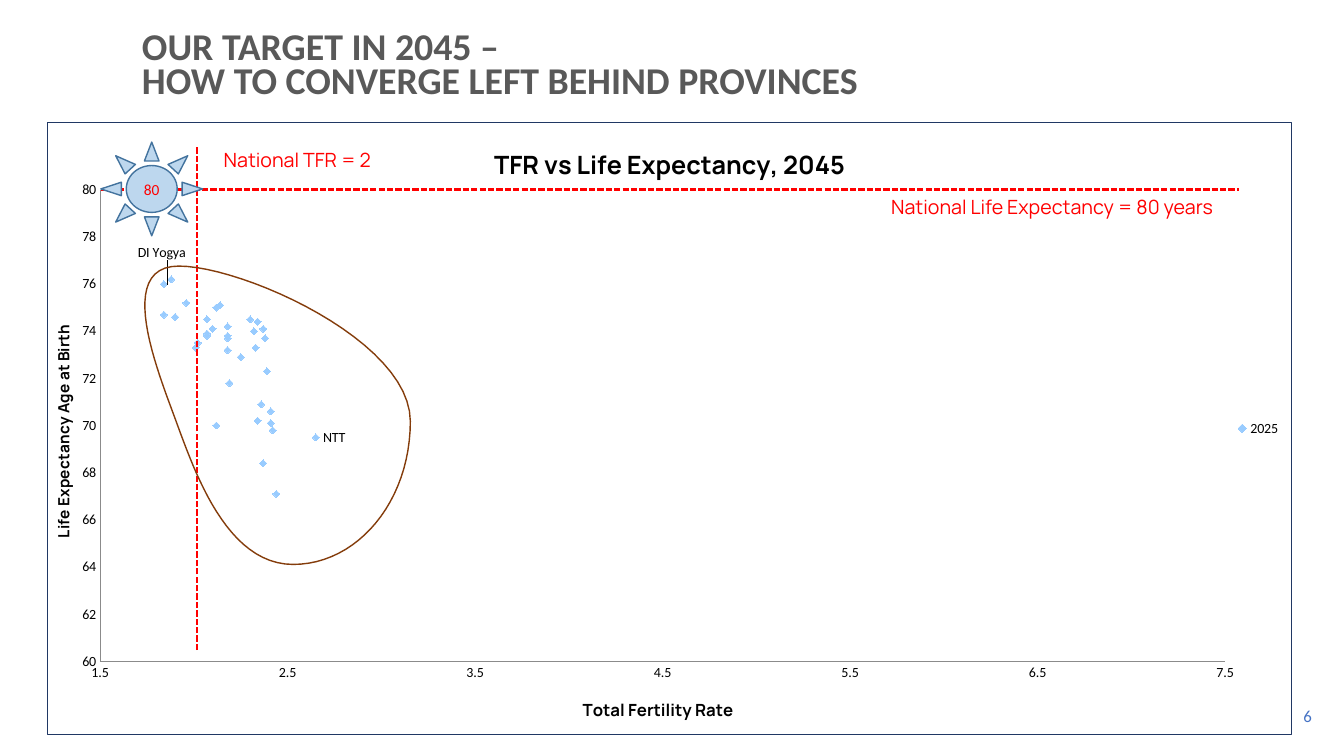
from dataclasses import dataclass

from pptx import Presentation, oxml
from pptx import util as u
from pptx.chart.data import XyChartData
from pptx.dml.color import RGBColor
from pptx.enum import chart as charts, dml, shapes, text
from pptx.oxml import ns


@dataclass(frozen=True)
class Theme:
    """Colours, fonts and type sizes of the slide."""
    body: str = "Calibri"
    display: str = "Manrope"
    ink: str = "000000"
    heading: str = "595959"
    target: str = "FF0000"
    frame: str = "203864"
    axis: str = "8B8B8B"
    province: str = "99CCFF"
    cluster: str = "843C0B"
    sun: str = "BDD7EE"
    sun_edge: str = "43739E"
    number: str = "4472C4"
    heading_size: float = 27
    chart_title_size: float = 18
    note_size: float = 14
    axis_title_size: float = 12
    side_title_size: float = 11
    label_size: float = 10


THEME = Theme()
FERTILITY = [2.33, 2.37, 2.38, 2.34, 2.18, 2.3, 2.19, 2.18, 2.18, 2.14, 1.88, 2.07,
             1.96, 1.84, 1.84, 2.12, 1.9, 2.34, 2.65, 2.18, 2.02, 2.25, 2.07, 2.32,
             2.01, 2.41, 2.07, 2.39, 2.12, 2.42, 2.41, 2.36, 2.44, 2.37, 2.1]
LIFE = [73.3, 74.1, 73.7, 74.4, 73.2, 74.5, 71.8, 74.2, 73.8, 75.1, 76.2, 74.5,
        75.2, 76, 74.7, 75, 74.6, 70.2, 69.5, 73.7, 73.5, 72.9, 73.9, 74,
        73.3, 70.1, 73.8, 72.3, 70, 69.8, 70.6, 70.9, 67.1, 68.4, 74.1]
PROVINCE_LABELS = {13: "DI Yogya", 18: "NTT"}


def assign(target, values):
    """Set every named attribute on the target."""
    for name, value in values.items():
        setattr(target, name, value)


def style_font(font, size, color, face=THEME.body, bold=False):
    """Apply size, colour, face and weight to a font."""
    assign(font, dict(size=u.Pt(size), name=face, bold=bold))
    font.color.rgb = RGBColor.from_string(color)


def style_line(line, color, width, dash=None):
    """Apply colour, width and dash to an outline."""
    line.color.rgb = RGBColor.from_string(color)
    assign(line, dict(width=u.Pt(width), dash_style=dash))


def add_text(slide, box, lines, font, **paragraph_format):
    """Place a text box with one paragraph per line."""
    frame = slide.shapes.add_textbox(*map(u.Inches, box)).text_frame
    frame.word_wrap = True
    frame.text = "\n".join(lines)
    for paragraph in frame.paragraphs:
        assign(paragraph, paragraph_format)
        style_font(paragraph.runs[0].font, *font)
    return frame


def manual_layout(**places):
    """Return a chart layout element with the given places."""
    parts = "".join(f'<c:{name} val="{value}"/>' for name, value in places.items())
    return oxml.parse_xml(f'<c:layout {ns.nsdecls("c")}><c:manualLayout>{parts}'
                          '</c:manualLayout></c:layout>')


def add_title(holder, words, size):
    """Give a chart or an axis its bold title."""
    holder.has_title = True
    title = holder.chart_title if hasattr(holder, "chart_title") else holder.axis_title
    title.text_frame.text = words
    style_font(title.text_frame.paragraphs[0].runs[0].font, size, THEME.ink,
               THEME.display, True)


def style_axis(axis, words, size, low, high, step):
    """Set scale, title and line of one axis."""
    assign(axis, dict(minimum_scale=low, maximum_scale=high, major_unit=step,
                      has_major_gridlines=False,
                      major_tick_mark=charts.XL_TICK_MARK.NONE,
                      minor_tick_mark=charts.XL_TICK_MARK.NONE))
    assign(axis.tick_labels, dict(number_format="General", number_format_is_linked=False))
    style_line(axis.format.line, THEME.axis, 0.75)
    add_title(axis, words, size)


def style_provinces(series):
    """Draw the provinces as diamonds and name the outliers."""
    series.format.line.fill.background()
    assign(series.marker, dict(style=charts.XL_MARKER_STYLE.DIAMOND, size=5))
    series.marker.format.fill.solid()
    series.marker.format.fill.fore_color.rgb = RGBColor.from_string(THEME.province)
    series.marker.format.line.fill.background()
    for index, province in PROVINCE_LABELS.items():
        label = series.points[index].data_label
        label.text_frame.text = province
        style_font(label.text_frame.paragraphs[0].runs[0].font, THEME.label_size, THEME.ink)
        label.position = charts.XL_LABEL_POSITION.RIGHT
    first = next(series._element.iter(ns.qn("c:dLbl")))
    first.find(ns.qn("c:idx")).addnext(manual_layout(x=-0.027, y=-0.051))


def add_scatter(slide, box):
    """Place the framed scatter chart of provinces."""
    data = XyChartData()
    provinces = data.add_series("2025")
    for fertility, life in zip(FERTILITY, LIFE):
        provinces.add_data_point(fertility, life)
    chart = slide.shapes.add_chart(charts.XL_CHART_TYPE.XY_SCATTER,
                                   *map(u.Inches, box), data).chart
    style_font(chart.font, THEME.label_size, THEME.ink)
    add_title(chart, "TFR vs Life Expectancy, 2045", THEME.chart_title_size)
    style_axis(chart.category_axis, "Total Fertility Rate", THEME.axis_title_size, 1.5, 7.5, 1)
    style_axis(chart.value_axis, "Life Expectancy Age at Birth", THEME.side_title_size, 60, 80, 2)
    chart.plots[0].vary_by_categories = False
    style_provinces(chart.plots[0].series[0])
    chart.has_legend = True
    assign(chart.legend, dict(position=charts.XL_LEGEND_POSITION.RIGHT, include_in_layout=False))
    root = chart._chartSpace
    next(root.iter(ns.qn("c:legendPos"))).addnext(
        manual_layout(xMode="edge", yMode="edge", x=0.22, y=0.64, w=0.05, h=0.06))
    plot_area = next(root.iter(ns.qn("c:plotArea")))
    for layout in plot_area.findall(ns.qn("c:layout")):
        plot_area.remove(layout)
    plot_area.insert(0, manual_layout(layoutTarget="inner", xMode="edge", yMode="edge",
                                      x=0.042, y=0.11, w=0.905, h=0.771))
    root.find(ns.qn("c:txPr")).addprevious(oxml.parse_xml(
        f'<c:spPr {ns.nsdecls("c", "a")}><a:noFill/><a:ln w="9525"><a:solidFill>'
        f'<a:srgbClr val="{THEME.frame}"/></a:solidFill></a:ln></c:spPr>'))


def add_line(slide, start, end, color, width, dash=None):
    """Draw a straight line without shadow."""
    line = slide.shapes.add_connector(shapes.MSO_CONNECTOR.STRAIGHT,
                                      *map(u.Inches, start + end))
    style_line(line.line, color, width, dash)
    line._element.spPr.append(oxml.parse_xml(f'<a:effectLst {ns.nsdecls("a")}/>'))


def add_cluster(slide, box):
    """Outline the cluster of provinces with a smooth closed curve."""
    left, top, width, height = box
    knots = [(0.12, 0.52), (0.05, 0.35), (-0.11, 0), (0.13, 0), (0.37, 0), (1, 0.25),
             (1, 0.52), (1, 0.79), (0.8, 1), (0.56, 1), (0.31, 1), (0.19, 0.69), (0.12, 0.52)]
    steps = 24
    outline = []
    for start in range(0, len(knots) - 1, 3):
        for step in range(steps):
            t = step / steps
            weights = ((1 - t) ** 3, 3 * t * (1 - t) ** 2, 3 * t * t * (1 - t), t ** 3)
            x, y = (sum(w * knot[axis] for w, knot in zip(weights, knots[start:start + 4]))
                    for axis in (0, 1))
            outline.append((u.Inches(left + x * width), u.Inches(top + y * height)))
    builder = slide.shapes.build_freeform(*outline[0])
    builder.add_line_segments(outline[1:], close=True)
    cluster = builder.convert_to_shape()
    cluster.shadow.inherit = False
    cluster.fill.background()
    style_line(cluster.line, THEME.cluster, 1)


def add_sun(slide, box):
    """Place the sun that marks the target of 80 years."""
    sun = slide.shapes.add_shape(shapes.MSO_SHAPE.SUN, *map(u.Inches, box))
    sun.shadow.inherit = False
    sun.fill.solid()
    sun.fill.fore_color.rgb = RGBColor.from_string(THEME.sun)
    style_line(sun.line, THEME.sun_edge, 1)
    sun.text_frame.text = "80"
    sun.text_frame.vertical_anchor = text.MSO_ANCHOR.MIDDLE
    years = sun.text_frame.paragraphs[0]
    years.alignment = text.PP_ALIGN.CENTER
    style_font(years.runs[0].font, THEME.side_title_size, THEME.target)


def add_targets(slide, box):
    """Cross the two national target lines and name them."""
    left, top, width, height = box
    dash = dml.MSO_LINE.SQUARE_DOT
    level, replacement = top + 0.43, left + 0.95
    add_line(slide, (left, level), (left + width, level), THEME.target, 1.5, dash)
    add_line(slide, (replacement, top + height), (replacement, top), THEME.target, 1.5, dash)
    add_cluster(slide, (left + 0.43, top + 1.19, 2.64, 2.96))
    add_sun(slide, (left, top - 0.04, 1.01, 0.93))
    font = (THEME.note_size, THEME.target, THEME.display)
    add_text(slide, (left + 1.12, top - 0.03, 1.95, 0.34), ["National TFR = 2"], font)
    add_text(slide, (left + 7.74, level, 3.65, 0.34),
             ["National Life Expectancy = 80 years"], font)


def main():
    """Build the slide and save it."""
    deck = Presentation()
    assign(deck, dict(slide_width=u.Inches(13.33), slide_height=u.Inches(7.5)))
    slide = deck.slides.add_slide(deck.slide_layouts[6])
    add_scatter(slide, (0.47, 1.21, 12.34, 6.08))
    add_text(slide, (1.31, 0.28, 10.82, 0.81),
             ["OUR TARGET IN 2045 –", "HOW TO CONVERGE LEFT BEHIND PROVINCES"],
             (THEME.heading_size, THEME.heading, THEME.body, True), line_spacing=0.75)
    add_targets(slide, (1, 1.45, 11.29, 5))
    number = add_text(slide, (10.11, 6.9, 3, 0.4), ["6"],
                      (THEME.axis_title_size, THEME.number), alignment=text.PP_ALIGN.RIGHT)
    number.vertical_anchor = text.MSO_ANCHOR.MIDDLE
    deck.save("out.pptx")


if __name__ == "__main__":
    main()
